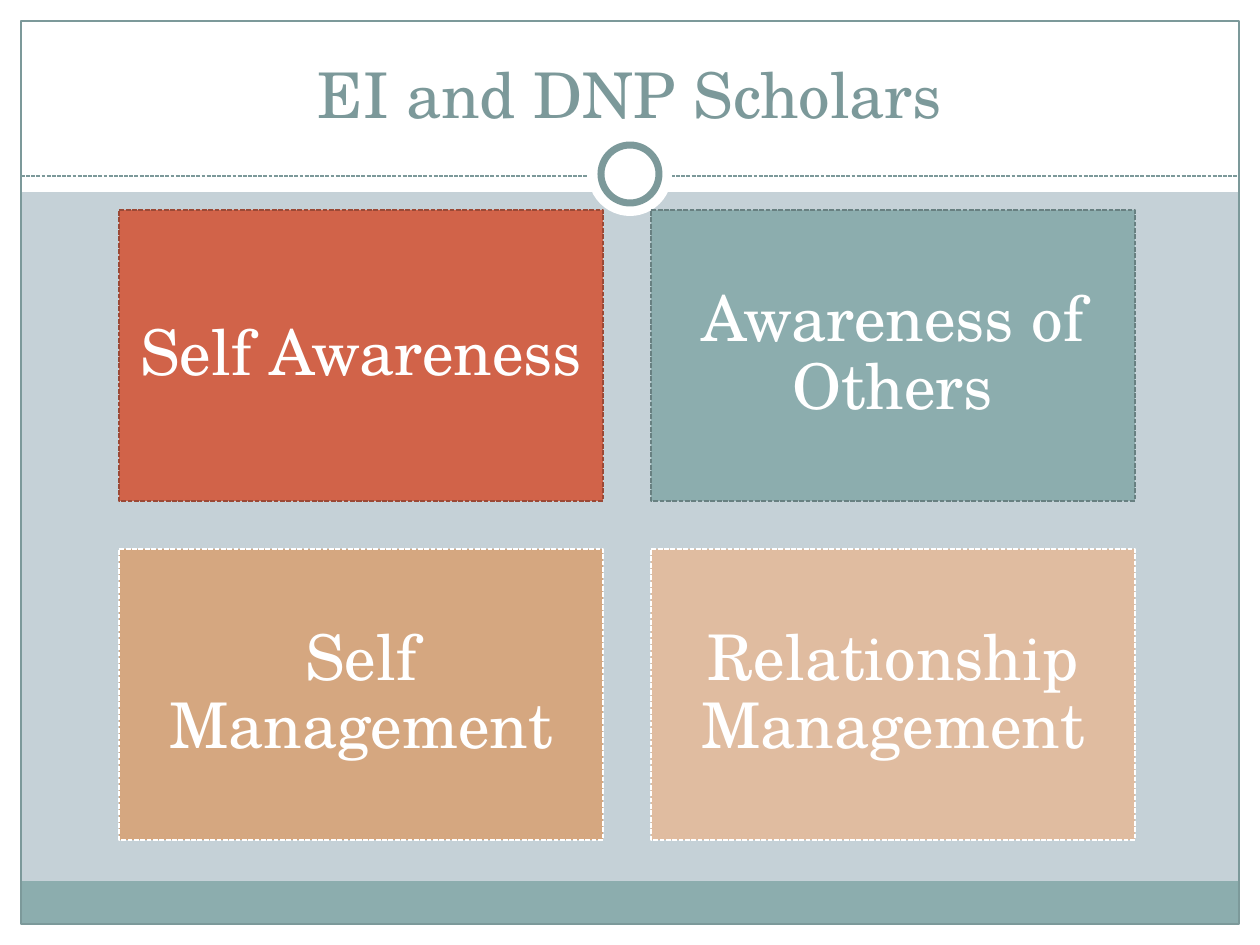
from lxml.etree import SubElement
from pptx import Presentation
from pptx.dml.color import RGBColor
from pptx.enum.dml import MSO_LINE
from pptx.enum.shapes import MSO_CONNECTOR, MSO_SHAPE
from pptx.enum.text import MSO_ANCHOR, MSO_AUTO_SIZE, PP_ALIGN
from pptx.oxml.ns import qn
from pptx.util import Pt

PX = 914400 / 126
COLORS = {
    "background": "C5D1D7", "white": "FFFFFF", "accent": "7C999A",
    "teal": "8CADAE", "teal_dark": "688081", "red": "D16349",
    "red_dark": "9B4936", "tan": "D5A780", "peach": "E0BCA0",
}


def px(*lengths):
    return [round(n * PX) for n in lengths]


class Deck:
    font = "TeX Gyre Schola"
    size = Pt(36)

    def __init__(self, width, height):
        self.prs = Presentation()
        self.prs.slide_width, self.prs.slide_height = px(width, height)
        self.s = self.prs.slides.add_slide(self.prs.slide_layouts[5])
        self.paint(self.s.background.fill, "background")

    def paint(self, fill, color):
        fill.solid()
        fill.fore_color.rgb = RGBColor.from_string(COLORS[color])

    def outline(self, line, color, width, dashed=False):
        self.paint(line.fill, color)
        line.width = Pt(width)
        if dashed:
            line.dash_style = MSO_LINE.SQUARE_DOT

    def shape(self, box, fill=None, kind=MSO_SHAPE.RECTANGLE, line=None, parent=None):
        """Add a preset shape; line holds the arguments of outline."""
        sp = (parent or self.s).shapes.add_shape(kind, *px(*box))
        sp.shadow.inherit = False
        if fill:
            self.paint(sp.fill, fill)
        else:
            sp.fill.background()
        if line:
            self.outline(sp.line, *line)
        else:
            sp.line.fill.background()
        return sp

    def rule(self, x1, y1, x2, y2):
        line = self.s.shapes.add_connector(MSO_CONNECTOR.STRAIGHT, *px(x1, y1, x2, y2))
        self.outline(line.line, "accent", 0.75, dashed=True)
        SubElement(line._element.spPr, qn("a:effectLst"))

    def text(self, sp, text, color, anchor):
        tf = sp.text_frame
        tf.text = text
        tf.word_wrap = True
        tf.auto_size = MSO_AUTO_SIZE.NONE
        tf.vertical_anchor = anchor
        p = tf.paragraphs[0]
        p.alignment = PP_ALIGN.CENTER
        p.font.name, p.font.size = self.font, self.size
        p.font.color.rgb = RGBColor.from_string(COLORS[color])
        return tf

    def title(self, box, text):
        sp = self.s.shapes.title
        sp.left, sp.top, sp.width, sp.height = px(*box)
        self.text(sp, text, "accent", MSO_ANCHOR.BOTTOM)
        self.s.shapes._spTree.append(sp._element)  # bring above the white bands

    def card(self, group, box, text, fill, edge):
        sp = self.shape(box, fill, line=(edge, 0.9, True), parent=group)
        tf = self.text(sp, text, "white", MSO_ANCHOR.MIDDLE)
        tf.margin_left, tf.margin_top, tf.margin_right, tf.margin_bottom = px(19, 19, 19, 19)
        tf.paragraphs[0].line_spacing = 0.9


def main():
    width, height, margin = 1260, 945, 21
    inner = width - 2 * margin
    deck = Deck(width, height)

    for band in (
        (0, height - margin, width, margin),
        (0, 0, width, 192),
        (0, 0, margin, height),
        (width - margin, 0, margin, height),
    ):
        deck.shape(band, "white")
    deck.shape((margin, 881, inner, 43), "teal")
    deck.shape((margin, margin, inner, height - 2 * margin), line=("accent", 0.75))
    deck.rule(margin, 176, width - margin, 176)
    deck.shape((588, 132, 84, 84), "white", MSO_SHAPE.OVAL)
    deck.shape((601, 145, 58, 58), "white", MSO_SHAPE.OVAL, ("accent", 4))
    deck.title((42, 32, 1176, 105), "EI and DNP Scholars")

    left, top, card_w, card_h, gap = 119, 210, 484, 291, 48
    cards = [
        ("Self Awareness", "red", "red_dark"),
        ("Awareness of Others", "teal", "teal_dark"),
        ("Self Management", "tan", "white"),
        ("Relationship Management", "peach", "white"),
    ]
    group = deck.s.shapes.add_group_shape()
    for i, card in enumerate(cards):
        row, col = divmod(i, 2)
        box = (left + col * (card_w + gap), top + row * (card_h + gap), card_w, card_h)
        deck.card(group, box, *card)

    deck.prs.save("out.pptx")


if __name__ == "__main__":
    main()
